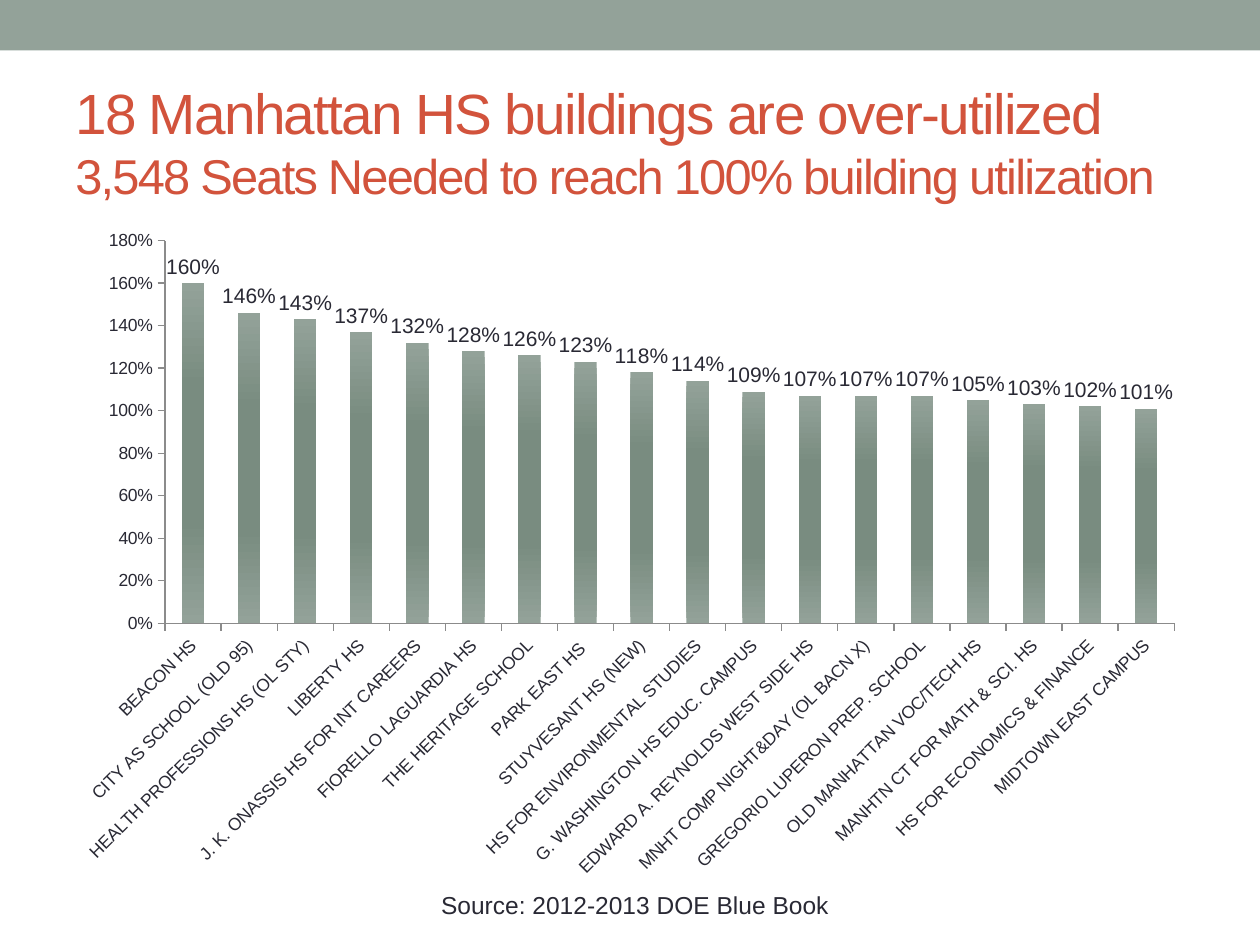
from lxml import etree
from pptx import Presentation
from pptx import util as u
from pptx.chart.data import CategoryChartData
from pptx.dml.color import RGBColor
from pptx.enum import chart as ch, shapes, text
from pptx.oxml import parse_xml
from pptx.oxml.ns import nsdecls, qn

WIDTH, HEIGHT = 10, 7.5
FONT = "Arial"
SAGE, DEEP_SAGE, RUST, INK, GREY = "93A299", "798C80", "D2533C", "292934", "8B8B8B"

UTILIZATION = [
    ("BEACON HS", 1.6),
    ("CITY AS SCHOOL (OLD 95)", 1.46),
    ("HEALTH PROFESSIONS HS (OL STY)", 1.43),
    ("LIBERTY HS", 1.37),
    ("J. K. ONASSIS HS FOR INT CAREERS", 1.32),
    ("FIORELLO LAGUARDIA HS", 1.28),
    ("THE HERITAGE SCHOOL", 1.26),
    ("PARK EAST HS ", 1.23),
    ("STUYVESANT HS (NEW)", 1.18),
    ("HS FOR ENVIRONMENTAL STUDIES", 1.14),
    ("G. WASHINGTON HS EDUC. CAMPUS", 1.09),
    ("EDWARD A. REYNOLDS WEST SIDE HS", 1.07),
    ("MNHT COMP NIGHT&DAY (OL BACN X)", 1.07),
    ("GREGORIO LUPERON PREP. SCHOOL", 1.07),
    ("OLD MANHATTAN VOC/TECH HS", 1.05),
    ("MANHTN CT FOR MATH & SCI. HS", 1.03),
    ("HS FOR ECONOMICS & FINANCE", 1.02),
    ("MIDTOWN EAST CAMPUS", 1.01),
]


def color(value):
    return RGBColor.from_string(value)


def inches(box):
    return [u.Inches(length) for length in box]


def style(font, size, tint):
    font.name, font.size = FONT, u.Pt(size)
    font.color.rgb = color(tint)


def add_run(para, words, size, tint, spacing=0):
    span = para.add_run()
    span.text = words
    style(span.font, size, tint)
    if spacing:
        span.font._element.set("spc", str(spacing * 100))


def add_text_box(page, box):
    frame = page.shapes.add_textbox(*inches(box)).text_frame
    frame.word_wrap = True
    frame.vertical_anchor = text.MSO_ANCHOR.MIDDLE
    return frame.paragraphs[0]


def add_band(page, box):
    band = page.shapes.add_shape(shapes.MSO_SHAPE.RECTANGLE, *inches(box))
    band.shadow.inherit = False
    band.fill.solid()
    band.fill.fore_color.rgb = color(SAGE)
    band.line.fill.background()


def add_title(page, box):
    para = add_text_box(page, box)
    add_run(para, "18 Manhattan HS buildings are over-utilized", 32.4, RUST, -1)
    para.add_line_break()
    add_run(para, "3,548 Seats Needed to reach 100% building utilization", 27.9, RUST, -1)


def add_source(page, box):
    para = add_text_box(page, box)
    para.alignment = text.PP_ALIGN.CENTER
    add_run(para, "Source: 2012-2013 DOE Blue Book", 14, INK)


def shade_bars(series):
    """Vertical gradient, darkest in the middle of each bar."""
    stops = "".join(
        f'<a:gs pos="{share * 1000}"><a:srgbClr val="{tint}"/></a:gs>'
        for share, tint in [(0, SAGE), (30, DEEP_SAGE), (70, DEEP_SAGE), (100, SAGE)])
    series.format.line.fill.background()
    series.format._element.get_or_add_spPr().insert(0, parse_xml(
        f'<a:gradFill {nsdecls("a")} rotWithShape="1"><a:gsLst>{stops}</a:gsLst>'
        '<a:lin ang="5400000" scaled="0"/></a:gradFill>'))


def place_plot(chart, shares):
    """Fix the inner plot area as shares of the chart frame."""
    plot_area = chart._chartSpace.find(".//" + qn("c:plotArea"))
    for old in plot_area.findall(qn("c:layout")):
        plot_area.remove(old)
    layout = etree.Element(qn("c:layout"))
    manual = etree.SubElement(layout, qn("c:manualLayout"))
    settings = [("layoutTarget", "inner"), ("xMode", "edge"), ("yMode", "edge")]
    for tag, value in settings + list(zip("xywh", shares)):
        etree.SubElement(manual, qn("c:" + tag)).set("val", str(value))
    plot_area.insert(0, layout)


def add_utilization_chart(page, box):
    data = CategoryChartData(number_format="0%")
    data.categories = [school for school, _ in UTILIZATION]
    data.add_series("Series 1", [share for _, share in UTILIZATION])
    chart = page.shapes.add_chart(
        ch.XL_CHART_TYPE.COLUMN_CLUSTERED, *inches(box), data).chart
    chart.has_legend = chart.has_title = False
    style(chart.font, 10, INK)
    place_plot(chart, (0.09, 0.03, 0.89, 0.57))

    # Axes
    for axis in (chart.category_axis, chart.value_axis):
        axis.has_major_gridlines = False
        axis.major_tick_mark = ch.XL_TICK_MARK.OUTSIDE
        axis.format.line.color.rgb = color(GREY)
        style(axis.tick_labels.font, 10, INK)
    chart.category_axis._element.find(".//" + qn("a:bodyPr")).set("rot", "-2700000")
    chart.value_axis.minimum_scale, chart.value_axis.maximum_scale = 0, 1.8
    chart.value_axis.major_unit = 0.2
    chart.value_axis.tick_labels.number_format = "0%"
    chart.value_axis.tick_labels.number_format_is_linked = False

    # Bars and their labels
    plot = chart.plots[0]
    plot.gap_width, plot.vary_by_categories = 150, False
    shade_bars(plot.series[0])
    labels = plot.series[0].data_labels
    labels.show_value = True
    labels.number_format, labels.number_format_is_linked = "0%", False
    labels.position = ch.XL_LABEL_POSITION.OUTSIDE_END
    style(labels.font, 12, INK)


def main():
    deck = Presentation()
    deck.slide_width, deck.slide_height = inches((WIDTH, HEIGHT))
    page = deck.slides.add_slide(deck.slide_layouts[6])
    margin = WIDTH * 0.05
    content = WIDTH - 2 * margin
    add_band(page, (0, 0, WIDTH, 0.4))
    add_title(page, (margin, 0.58, content, 1.08))
    add_utilization_chart(page, (margin, 1.75, content, 5.33))
    add_source(page, (0.3, 7.01, 9.48, 0.34))
    deck.save("out.pptx")


if __name__ == "__main__":
    main()
